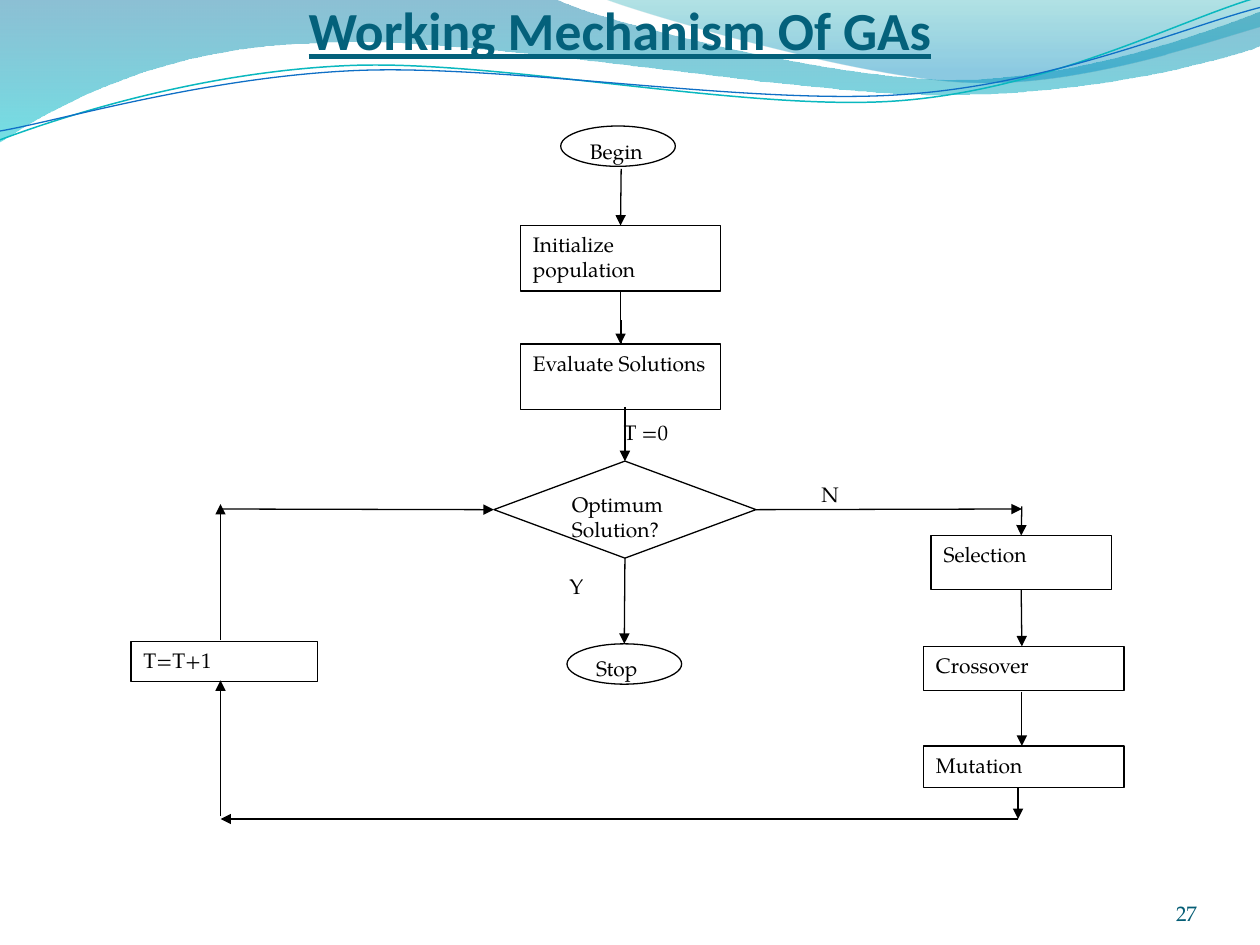
import math

import pptx
import pptx.util
from lxml import etree
from pptx.dml.color import RGBColor
from pptx.enum.shapes import MSO_CONNECTOR, MSO_SHAPE
from pptx.enum.text import MSO_ANCHOR, PP_ALIGN
from pptx.oxml.ns import qn
from pptx.util import Inches, Pt

BLACK = RGBColor(0x00, 0x00, 0x00)
WHITE = RGBColor(0xFF, 0xFF, 0xFF)
TITLE_TEAL = RGBColor(0x04, 0x61, 0x7B)
NUMBER_TEAL = RGBColor(0x04, 0x5D, 0x75)
DEEP_BLUE = RGBColor(0x00, 0x74, 0xA1)
TURQUOISE = RGBColor(0x00, 0xC6, 0xCF)
SEA_GREEN = RGBColor(0x00, 0xA1, 0xA9)
SKY_BLUE = RGBColor(0x00, 0x8B, 0xBF)
AQUA = RGBColor(0x0A, 0xB8, 0xBF)
ROYAL_BLUE = RGBColor(0x0F, 0x6F, 0xC6)

BODY_FONT = "TeX Gyre Pagella"
TOP, LEFT, BOTTOM, RIGHT = range(4)
WAVE_TILT = 2.7  # degrees, counter-clockwise

# A pair is a line end; six numbers are a cubic curve. Stops: percent, colour, opacity.
WAVE_BANDS = [
    ([(0, 0), (4.4, -0.01), (4.76, 0.17, 6.64, 0.63, 7.58, 0.63),
      (8.53, 0.63, 9.58, 0.26, 10, 0.09), (10.01, 0.36),
      (9.83, 0.44, 8.7, 0.76, 7.46, 0.75), (6.22, 0.75, 3.82, 0.28, 2.57, 0.34),
      (1.29, 0.36, 0.46, 0.83, -0.01, 1.13), (0, 0)],
     [(0, DEEP_BLUE, 45), (100, TURQUOISE, 55)]),
    ([(4.79, -0.01), (5.09, 0.11, 6.82, 0.62, 7.69, 0.65),
      (8.56, 0.69, 9.61, 0.32, 10, 0.21), (10, 0), (4.79, -0.01)],
     [(0, SEA_GREEN, 30), (80, SKY_BLUE, 45)]),
]
# Outline, centre of its tilt, colour, width.
WAVE_LINES = [
    ([(0, 1.11), (0.48, 0.93, 1.58, 0.57, 2.77, 0.52),
      (3.95, 0.47, 5.93, 0.89, 7.13, 0.8), (8.33, 0.71, 9.38, 0.15, 9.98, -0.02)],
     (4.99, 0.58), AQUA, 0.85),
    ([(0, 1.04), (0.47, 0.96, 1.64, 0.61, 2.83, 0.56),
      (4.03, 0.51, 5.97, 0.84, 7.17, 0.75), (8.36, 0.67, 9.41, 0.21, 10, 0.06)],
     (5, 0.59), ROYAL_BLUE, 0.75),
]

TERMINAL = MSO_SHAPE.FLOWCHART_CONNECTOR
PROCESS = MSO_SHAPE.FLOWCHART_PROCESS
DECISION = MSO_SHAPE.FLOWCHART_DECISION
STEPS = {
    "Begin": (TERMINAL, 4.45, 1, 0.91, 0.32),
    "Initialize population": (PROCESS, 4.13, 1.79, 1.59, 0.52),
    "Evaluate Solutions": (PROCESS, 4.13, 2.73, 1.59, 0.52),
    "Optimum Solution?": (DECISION, 3.92, 3.66, 2.08, 0.77),
    "Stop": (TERMINAL, 4.5, 5.11, 0.91, 0.32),
    "T=T+1": (PROCESS, 1.04, 5.09, 1.48, 0.32),
    "Selection": (PROCESS, 7.39, 4.25, 1.43, 0.43),
    "Crossover": (PROCESS, 7.33, 5.13, 1.59, 0.35),
    "Mutation": (PROCESS, 7.33, 5.92, 1.59, 0.33),
}
# An end is a point, or a step with one of its sides.
ARROW_BEHIND = ((4.93, 2.54), (4.93, 3.08))
ARROWS = [
    ((4.93, 1.34), ("Initialize population", TOP)),
    (("Initialize population", BOTTOM), ("Evaluate Solutions", TOP)),
    ((4.96, 3.23), ("Optimum Solution?", TOP)),
    (("Optimum Solution?", BOTTOM), ("Stop", TOP)),
    (("Optimum Solution?", RIGHT), (8.11, 4.04)),
    ((8.11, 4.02), ("Selection", TOP)),
    (("Selection", BOTTOM), (8.11, 5.13)),
    ((8.11, 5.49), (8.11, 5.92)),
    ((8.08, 6.25), (8.08, 6.5)),
    ((8.08, 6.5), (1.75, 6.5)),
    ((1.75, 6.48), (1.75, 5.4)),
    ((1.75, 5.08), (1.75, 4)),
    ((1.75, 4.04), ("Optimum Solution?", LEFT)),
]
LABELS = [("T =0", 4.85, 3.28), ("N", 6.42, 3.77), ("Y", 4.42, 4.5)]


def write_text(shape, text, *, size=12, font=BODY_FONT, color=BLACK, bold=False,
               underline=False, align=PP_ALIGN.LEFT, anchor=MSO_ANCHOR.TOP, insets=None):
    frame = shape.text_frame
    frame.word_wrap = True
    frame.vertical_anchor = anchor
    if insets is not None:
        frame.margin_left = frame.margin_right = Inches(insets)
        frame.margin_top = frame.margin_bottom = Inches(insets)
    para = frame.paragraphs[0]
    para.alignment = align
    span = para.add_run()
    span.text = text
    span.font.size = Pt(size)
    span.font.name = font
    span.font.color.rgb = color
    span.font.bold = bold
    span.font.underline = underline


def level(point, center):
    """Turn a point of a tilted wave back to where it lies before the tilt."""
    angle = math.radians(WAVE_TILT)
    across, down = point[0] - center[0], point[1] - center[1]
    return (center[0] + across * math.cos(angle) - down * math.sin(angle),
            center[1] + across * math.sin(angle) + down * math.cos(angle))


def add_wave(page, outline, center=None):
    """Draw the outline through all its points, then join each curve's three into one."""
    points = [part[i:i + 2] for part in outline for i in range(0, len(part), 2)]
    if center:
        points = [level(point, center) for point in points]
    points = [(Inches(x), Inches(y)) for x, y in points]
    builder = page.shapes.build_freeform(*points[0])
    builder.add_line_segments(points[1:], close=center is None)
    wave = builder.convert_to_shape()
    segments = iter(list(wave.element.iter(qn("a:lnTo"))))
    for part in outline[1:]:
        segment = next(segments)
        if len(part) == 6:
            segment.tag = qn("a:cubicBezTo")
            for _ in range(2):
                extra = next(segments)
                segment.append(extra[0])
                extra.getparent().remove(extra)
    wave.shadow.inherit = False
    return wave


def add_waves(page):
    for outline, stops in WAVE_BANDS:
        band = add_wave(page, outline)
        band.fill.gradient()
        band.fill.gradient_angle = 270
        for stop, (position, color, _) in zip(band.fill.gradient_stops, stops):
            stop.position = position / 100
            stop.color.rgb = color
        for node, (_, _, opacity) in zip(list(band.element.iter(qn("a:srgbClr"))), stops):
            etree.SubElement(node, qn("a:alpha"), val=str(opacity * 1000))
        band.line.fill.background()
    for outline, center, color, width in WAVE_LINES:
        wave = add_wave(page, outline, center)
        wave.rotation = -WAVE_TILT
        wave.fill.background()
        wave.line.color.rgb = color
        wave.line.width = Pt(width)


def add_step(page, text, kind, *place):
    step = page.shapes.add_shape(kind, *map(Inches, place))
    step.shadow.inherit = False
    step.fill.solid()
    step.fill.fore_color.rgb = WHITE
    step.line.color.rgb = BLACK
    step.line.width = Pt(0.75)
    write_text(step, text)
    return step


def add_arrow(page, steps, start, end):
    points = [(0, 0) if point[0] in steps else point for point in (start, end)]
    ends = [Inches(value) for point in points for value in point]
    arrow = page.shapes.add_connector(MSO_CONNECTOR.STRAIGHT, *ends)
    if start[0] in steps:
        arrow.begin_connect(steps[start[0]], start[1])
    if end[0] in steps:
        arrow.end_connect(steps[end[0]], end[1])
    arrow.line.color.rgb = BLACK
    arrow.line.width = Pt(0.75)
    properties = arrow.element.spPr
    etree.SubElement(properties.find(qn("a:ln")), qn("a:tailEnd"), type="triangle")
    etree.SubElement(properties, qn("a:effectLst"))


def add_label(page, text, *place, **style):
    box = page.shapes.add_textbox(*map(Inches, place))
    write_text(box, text, **style)


def main():
    deck = pptx.Presentation()
    deck.slide_width, deck.slide_height = Inches(10), Inches(7.5)
    page = deck.slides.add_slide(deck.slide_layouts[5])
    add_waves(page)

    title = page.shapes.title
    title.element.getparent().append(title.element)  # in front of the waves
    title.left, title.top, title.width, title.height = map(Inches, (0.42, -0.04, 9, 0.53))
    write_text(title, "Working Mechanism Of GAs", size=30.6, font="Calibri",
               color=TITLE_TEAL, bold=True, underline=True, align=PP_ALIGN.CENTER,
               anchor=MSO_ANCHOR.BOTTOM, insets=0)

    add_arrow(page, {}, *ARROW_BEHIND)
    steps = {text: add_step(page, text, *look) for text, look in STEPS.items()}
    for start, end in ARROWS:
        add_arrow(page, steps, start, end)
    for text, left, top in LABELS:
        add_label(page, text, left, top, 0.75, 0.3)
    add_label(page, "27", 8.67, 6.95, 0.83, 0.4, color=NUMBER_TEAL,
              align=PP_ALIGN.RIGHT, anchor=MSO_ANCHOR.BOTTOM, insets=0)
    deck.save("out.pptx")


if __name__ == "__main__":
    main()
